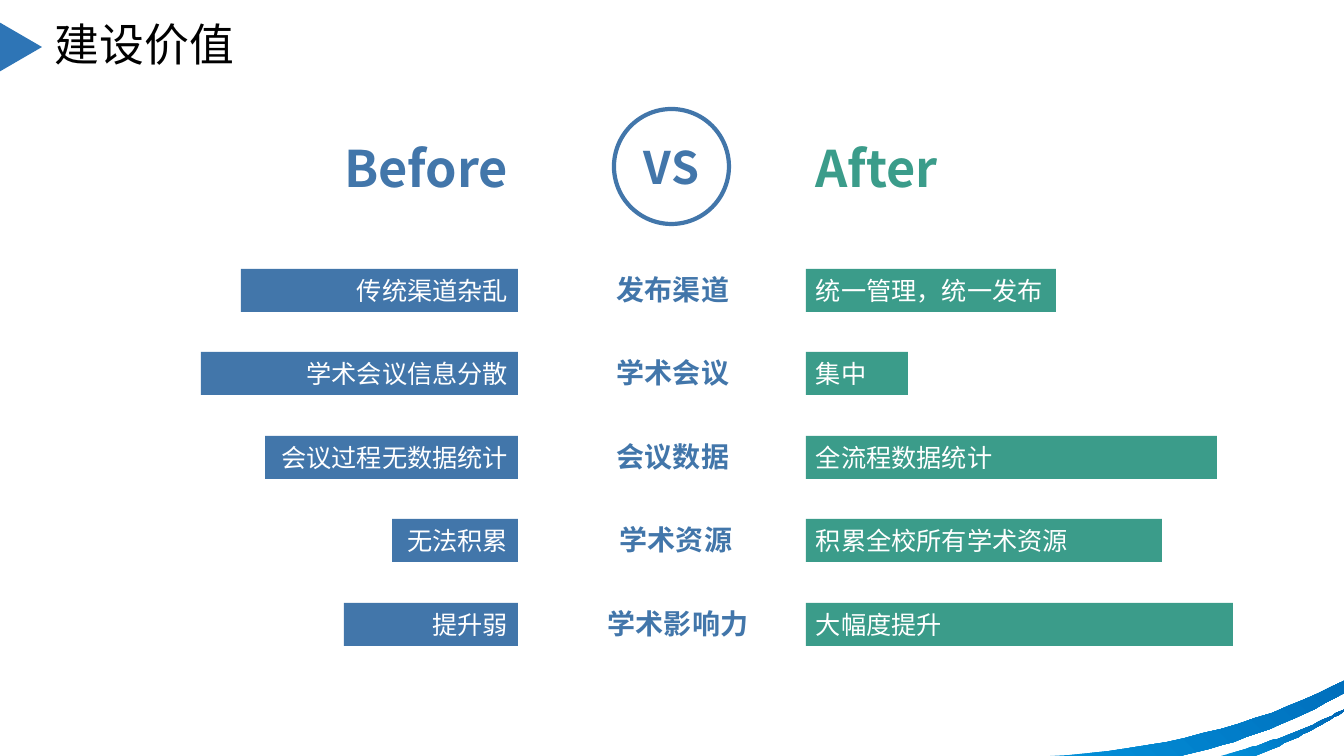
from pptx import Presentation
from pptx import util as u
from pptx.dml.color import RGBColor
from pptx.enum import shapes, text

PX = 914400 / 100.8
FONT = "Noto Sans CJK SC"
BLUE = RGBColor(0x42, 0x76, 0xAA)
GREEN = RGBColor(0x3B, 0x9C, 0x8A)
WHITE = RGBColor(0xFF, 0xFF, 0xFF)
BLACK = RGBColor(0x00, 0x00, 0x00)
ARROW_BLUE = RGBColor(0x2E, 0x75, 0xB6)
SWOOSH_LIGHT = RGBColor(0x02, 0x90, 0xD9)
SWOOSH_DARK = RGBColor(0x00, 0x5E, 0xAE)
LEFT, CENTER, RIGHT = text.PP_ALIGN.LEFT, text.PP_ALIGN.CENTER, text.PP_ALIGN.RIGHT

presentation = Presentation()
presentation.slide_width = u.Emu(round(1344 * PX))
presentation.slide_height = u.Emu(round(756 * PX))
slide = presentation.slides.add_slide(presentation.slide_layouts[6])


def add_item(box, content="", kind=None, fill=None, line=None, size=18,
             color=WHITE, bold=False, align=LEFT, middle=True, spacing=None):
    """Add a text box, or a preset shape when kind is given; box is in px."""
    place = [u.Emu(round(value * PX)) for value in box]
    if kind is None:
        shape = slide.shapes.add_textbox(*place)
    else:
        shape = slide.shapes.add_shape(kind, *place)
        shape.shadow.inherit = False
        if fill is None:
            shape.fill.background()
        else:
            shape.fill.solid()
            shape.fill.fore_color.rgb = fill
        if line is None:
            shape.line.fill.background()
        else:
            shape.line.color.rgb = line
            shape.line.width = u.Pt(3)
    if content:
        frame = shape.text_frame
        frame.word_wrap = True
        frame.vertical_anchor = text.MSO_ANCHOR.MIDDLE if middle else text.MSO_ANCHOR.TOP
        paragraph = frame.paragraphs[0]
        paragraph.text = content
        paragraph.alignment = align
        paragraph.line_spacing = spacing
        font = paragraph.font
        font.name, font.size, font.bold = FONT, u.Pt(size), bold
        font.color.rgb = color
    return shape


# Corner swooshes: corner points, then cubic curves as (control, control, end)
swooshes = [
    ([(1255, 756), (1221, 756), (1246, 749)],
     [((1289, 736), (1329, 719), (1363, 699)), ((1332, 721), (1295, 740), (1255, 756))]),
    ([(1180, 756), (1050, 756), (1070, 755)],
     [((1230, 742), (1366, 687), (1443, 610)), ((1394, 671), (1310, 721), (1209, 749))]),
]
for corners, curves in swooshes:
    points = list(corners)
    for first, second, end in curves:
        start = points[-1]
        for step in range(1, 25):
            t = step / 24
            points.append(tuple(
                (1 - t) ** 3 * a + 3 * (1 - t) ** 2 * t * b + 3 * (1 - t) * t ** 2 * c + t ** 3 * d
                for a, b, c, d in zip(start, first, second, end)))
    builder = slide.shapes.build_freeform(*points[0], scale=PX)
    builder.add_line_segments(points[1:], close=True)
    swoosh = builder.convert_to_shape()
    swoosh.shadow.inherit = False
    swoosh.line.fill.background()
    swoosh.fill.gradient()
    swoosh.fill.gradient_angle = 45
    for stop, color in zip(swoosh.fill.gradient_stops, (SWOOSH_LIGHT, SWOOSH_DARK)):
        stop.color.rgb = color

# Title with its arrow
arrow = add_item((-12, 22, 58, 50), kind=shapes.MSO_SHAPE.ISOSCELES_TRIANGLE, fill=ARROW_BLUE)
arrow.rotation = 90
add_item((45, 22, 594, 50), "建设价值", size=32, color=BLACK, spacing=0.9)

# Headings
add_item((127, 132, 391, 72), "Before", size=36, color=BLUE, bold=True, align=RIGHT, middle=False)
add_item((614, 109, 115, 115), "VS", kind=shapes.MSO_SHAPE.OVAL, line=BLUE,
         size=32, color=BLUE, bold=True, align=CENTER)
add_item((806, 132, 391, 72), "After", size=36, color=GREEN, bold=True, middle=False)

# Comparison rows: before, bar width, topic, topic left, after, bar width
rows = [
    ("传统渠道杂乱", 277, "发布渠道", 607, "统一管理，统一发布", 250),
    ("学术会议信息分散", 317, "学术会议", 607, "集中", 102),
    ("会议过程无数据统计", 253, "会议数据", 607, "全流程数据统计", 411),
    ("无法积累", 126, "学术资源", 610, "积累全校所有学术资源", 356),
    ("提升弱", 174, "学术影响力", 598, "大幅度提升", 427),
]
bar = shapes.MSO_SHAPE.RECTANGLE
for index, (before, before_width, topic, topic_left, after, after_width) in enumerate(rows):
    top = 269 + index * 167 // 2
    add_item((518 - before_width, top, before_width, 43), before, kind=bar, fill=BLUE, align=RIGHT)
    add_item((topic_left, top - 1, 173, 44), topic, size=20, color=BLUE, bold=True, middle=False)
    add_item((806, top, after_width, 43), after, kind=bar, fill=GREEN)

presentation.save("out.pptx")
